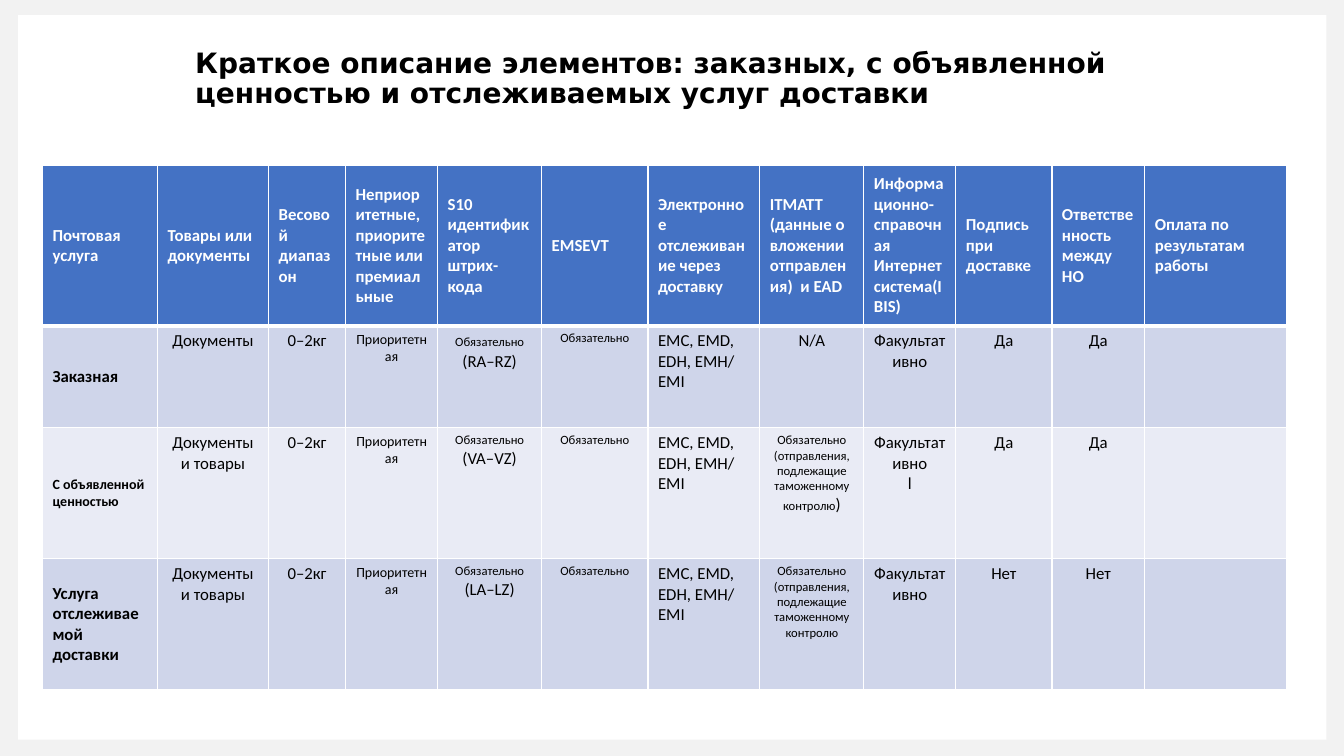
from lxml import etree
from pptx import Presentation
from pptx import util as u
from pptx.dml.color import RGBColor
from pptx.enum import shapes, text
from pptx.oxml import ns

COLUMN_WIDTHS = [2.9, 2.8, 1.94, 2.32, 2.62, 2.68, 2.82, 2.62, 2.32, 2.42, 2.34, 3.58]
ROW_HEIGHTS = [4.04, 2.57, 3.3, 3.3]
HEADERS = [
    "Почтовая услуга", "Товары или документы", "Весовой диапазон",
    "Неприоритетные, приоритетные или премиальные",
    "S10 идентификатор штрих-кода", "EMSEVT",
    "Электронное отслеживание через доставку",
    "ITMATT (данные о вложении отправления)  и EAD",
    "Информационно-справочная Интернет система(IBIS)",
    "Подпись при доставке", "Ответственность между НО",
    "Оплата по результатам работы",
]
REQUIRED = ("Обязательно", 9)
CUSTOMS = ("Обязательно (отправления, подлежащие таможенному контролю", 9)
TRACKING_COLUMN = 6


def color(value):
    return RGBColor.from_string(value)


def line(*runs):
    return list(runs)


def service(name, name_size, goods, barcode, customs, information, answer):
    return [
        [line((name, name_size))],
        [line((goods, 12))],
        [line(("0–2кг", 12))],
        [line(("Приоритетная", 10))],
        barcode,
        [line(REQUIRED)],
        [line(("EMC, EMD, EDH, EMH/", 12)), line(("EMI", 12))],
        [customs],
        [line((word, 12)) for word in information],
        [line((answer, 12))],
        [line((answer, 12))],
        [],
    ]


SERVICES = [
    service("Заказная", 12, "Документы", [line(REQUIRED, (" (RA–RZ)", 12))],
            line(("N/A", 12)), ["Факультативно"], "Да"),
    service("С объявленной ценностью", 10, "Документы и товары",
            [line(REQUIRED), line(("(VA–VZ)", 12))],
            line(CUSTOMS, (")", 12)), ["Факультативно", "l"], "Да"),
    service("Услуга отслеживаемой доставки", 12, "Документы и товары",
            [line(REQUIRED), line(("(LA–LZ)", 12))],
            line(CUSTOMS), ["Факультативно"], "Нет"),
]


def add_panel(slide, left, top, width, height, fill):
    shape = slide.shapes.add_shape(shapes.MSO_SHAPE.RECTANGLE,
                                   u.Cm(left), u.Cm(top), u.Cm(width), u.Cm(height))
    shape.shadow.inherit = False
    shape.fill.solid()
    shape.fill.fore_color.rgb = color(fill)
    shape.line.fill.background()


def format_font(font, name, size, fill, bold):
    font.name = name
    font.size = u.Pt(size)
    font.color.rgb = color(fill)
    font.bold = bold


def add_title(slide, wording):
    box = slide.shapes.add_textbox(u.Cm(4.67), u.Cm(1.12), u.Cm(26.97), u.Cm(1.8))
    frame = box.text_frame
    frame.word_wrap = True
    frame.text = wording
    paragraph = frame.paragraphs[0]
    paragraph.line_spacing = 0.9
    format_font(paragraph.runs[0].font, "DejaVu Sans", 20, "000000", True)


def set_borders(cell, top, bottom):
    properties = cell._tc.get_or_add_tcPr()
    for side, width in (("L", 1), ("R", 1), ("T", top), ("B", bottom)):
        border = etree.SubElement(properties, ns.qn(f"a:ln{side}"), w=str(u.Pt(width)))
        fill = etree.SubElement(border, ns.qn("a:solidFill"))
        etree.SubElement(fill, ns.qn("a:srgbClr"), val="FFFFFF")


def write_cell(cell, lines, fill, font_color, bold, centered):
    cell.fill.solid()
    cell.fill.fore_color.rgb = color(fill)
    if bold:
        cell.vertical_anchor = text.MSO_ANCHOR.MIDDLE
    frame = cell.text_frame
    for index, runs in enumerate(lines):
        paragraph = frame.paragraphs[0] if index == 0 else frame.add_paragraph()
        if centered:
            paragraph.alignment = text.PP_ALIGN.CENTER
        for wording, size in runs:
            run = paragraph.add_run()
            run.text = wording
            format_font(run.font, "Calibri", size, font_color, bold)


def add_services_table(slide):
    rows = [[[line((header, 12))] for header in HEADERS]] + SERVICES
    frame = slide.shapes.add_table(len(rows), len(HEADERS), u.Cm(1.07), u.Cm(4.17),
                                   u.Cm(sum(COLUMN_WIDTHS)), u.Cm(sum(ROW_HEIGHTS)))
    table = frame.table
    for column, width in zip(table.columns, COLUMN_WIDTHS):
        column.width = u.Cm(width)
    for row, height in zip(table.rows, ROW_HEIGHTS):
        row.height = u.Cm(height)
    for row_index, row in enumerate(rows):
        is_header = row_index == 0
        band = "CFD5EA" if row_index % 2 else "E9EBF5"
        for column_index, lines in enumerate(row):
            cell = table.cell(row_index, column_index)
            set_borders(cell, 3 if row_index == 1 else 1, 3 if is_header else 1)
            write_cell(cell, lines,
                       fill="4472C4" if is_header else band,
                       font_color="FFFFFF" if is_header else "000000",
                       bold=is_header or column_index == 0,
                       centered=not is_header and column_index not in (0, TRACKING_COLUMN))


def main():
    presentation = Presentation()
    presentation.slide_width = u.Cm(33.87)
    presentation.slide_height = u.Cm(19.05)
    slide = presentation.slides.add_slide(presentation.slide_layouts[6])
    add_panel(slide, 0, 0, 33.87, 19.05, "F2F2F2")
    add_panel(slide, 0.46, 0.38, 32.97, 18.26, "FFFFFF")
    add_services_table(slide)
    add_title(slide, "Краткое описание элементов: заказных, с объявленной ценностью "
                     "и отслеживаемых услуг доставки")
    presentation.save("out.pptx")


if __name__ == "__main__":
    main()
